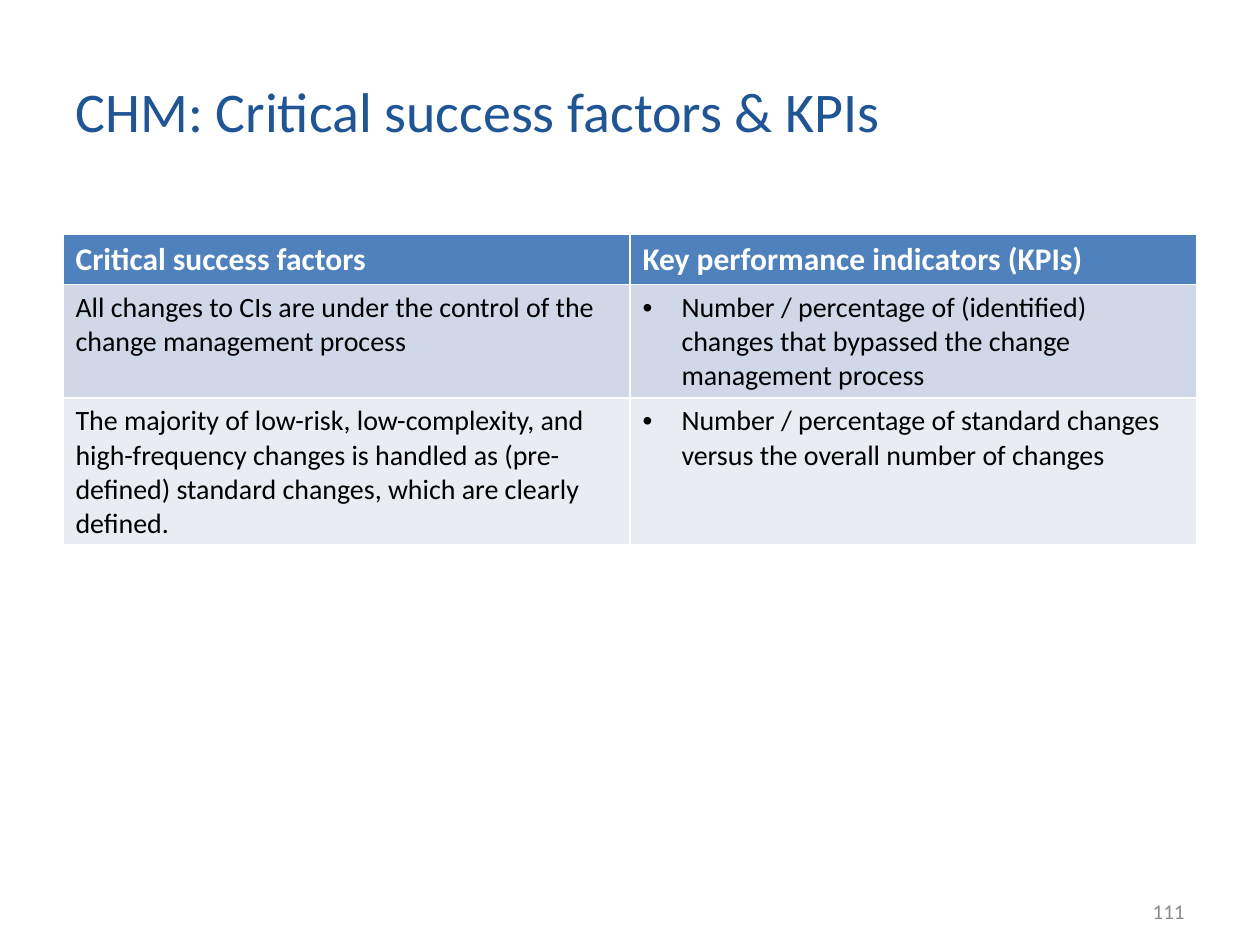
from lxml import etree
from pptx import Presentation, util as u
from pptx.dml.color import RGBColor
from pptx.enum import text
from pptx.oxml.ns import qn

TITLE = "CHM: Critical success factors & KPIs"
PAGE_NUMBER = "111"
HEADINGS = ("Critical success factors", "Key performance indicators (KPIs)")
FACTORS = [
    ("All changes to CIs are under the control of the change management process",
     "Number / percentage of (identified) changes that bypassed the change "
     "management process"),
    ("The majority of low-risk, low-complexity, and high-frequency changes is "
     "handled as (pre-defined) standard changes, which are clearly defined.",
     "Number / percentage of standard changes versus the overall number of changes"),
]

FONT = "Calibri"
TITLE_BLUE = RGBColor(0x20, 0x55, 0x95)
HEADER_BLUE = RGBColor(0x4F, 0x81, 0xBD)
BANDS = (RGBColor(0xD0, 0xD8, 0xE7), RGBColor(0xE9, 0xEC, 0xF3))
WHITE = RGBColor(0xFF, 0xFF, 0xFF)
BLACK = RGBColor(0, 0, 0)
GREY = RGBColor(0x8B, 0x8B, 0x8B)

PX = u.Inches(1) // 126
TABLE_LEFT, TABLE_TOP, COLUMN_WIDTH = 63, 234, 567
ROW_HEIGHTS = (44, 96, 123)
BULLET_INDENT = 39


def set_font(para, size, color, bold=False):
    para.font.name = FONT
    para.font.size = u.Pt(size)
    para.font.color.rgb = color
    para.font.bold = bold


def add_text(page, place, words, size, color, align):
    box = page.shapes.add_textbox(*(n * PX for n in place))
    frame = box.text_frame
    frame.word_wrap = True
    frame.vertical_anchor = text.MSO_ANCHOR.MIDDLE
    para = frame.paragraphs[0]
    para.text = words
    para.alignment = align
    set_font(para, size, color)


def add_bullet(para):
    props = para._p.get_or_add_pPr()
    props.set("marL", str(BULLET_INDENT * PX))
    props.set("indent", str(-BULLET_INDENT * PX))
    etree.SubElement(props, qn("a:buFont"), typeface="Arial")
    etree.SubElement(props, qn("a:buChar"), char="•")


def add_factor_table(page):
    """Borders come from the default table style: white, thicker under the header."""
    rows = [HEADINGS] + FACTORS
    table = page.shapes.add_table(
        len(rows), len(HEADINGS), TABLE_LEFT * PX, TABLE_TOP * PX,
        len(HEADINGS) * COLUMN_WIDTH * PX, sum(ROW_HEIGHTS) * PX).table
    for r, row in enumerate(rows):
        table.rows[r].height = ROW_HEIGHTS[r] * PX
        header = r == 0
        for c, words in enumerate(row):
            cell = table.cell(r, c)
            cell.fill.solid()
            cell.fill.fore_color.rgb = HEADER_BLUE if header else BANDS[r - 1]
            para = cell.text_frame.paragraphs[0]
            para.text = words
            if c == 1 and not header:
                add_bullet(para)
            set_font(para, 18 if header else 16, WHITE if header else BLACK, header)


def main():
    deck = Presentation()
    deck.slide_width, deck.slide_height = 1260 * PX, 945 * PX
    page = deck.slides.add_slide(deck.slide_layouts[6])
    add_text(page, (63, 38, 1013, 145), TITLE, 32, TITLE_BLUE, text.PP_ALIGN.LEFT)
    add_factor_table(page)
    add_text(page, (903, 886, 294, 50), PAGE_NUMBER, 12, GREY, text.PP_ALIGN.RIGHT)
    deck.save("out.pptx")


if __name__ == "__main__":
    main()
